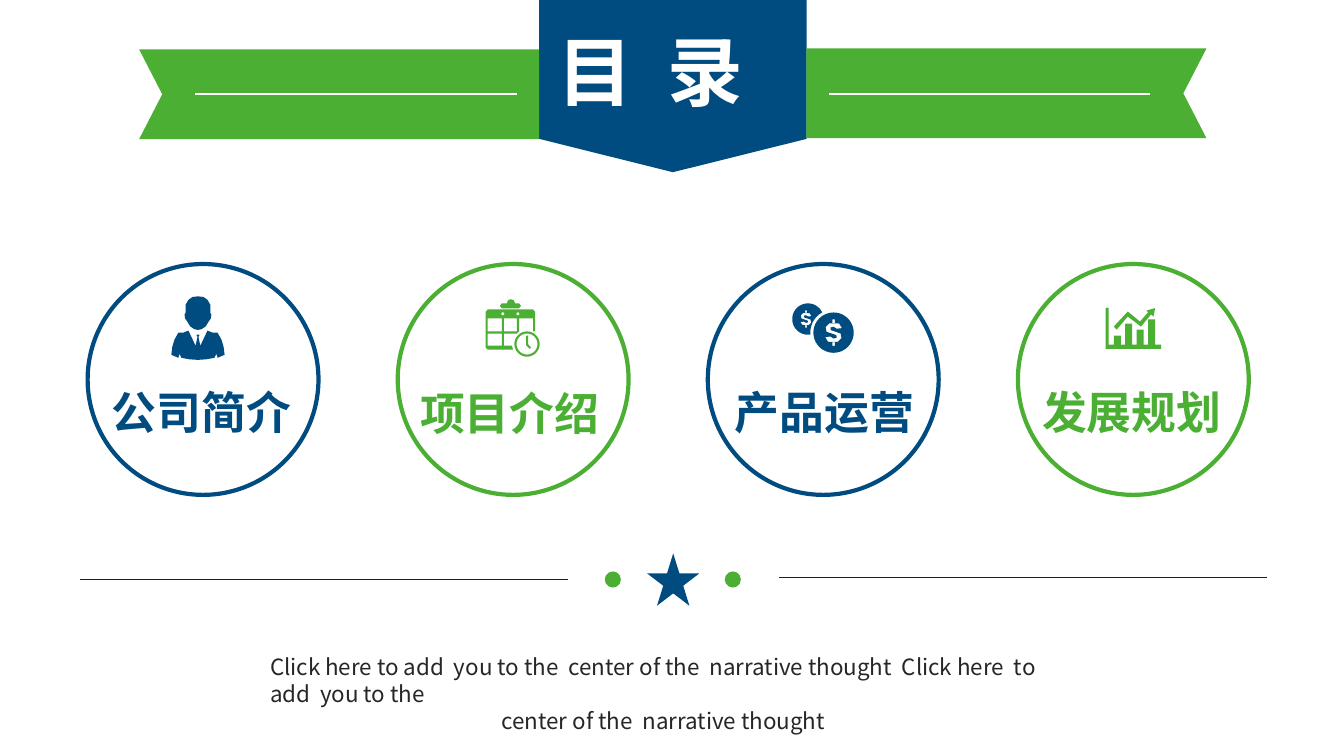
from dataclasses import dataclass
from math import cos, radians, sin

from lxml.etree import SubElement
from pptx import Presentation
from pptx.dml.color import RGBColor
from pptx.enum.shapes import MSO_CONNECTOR, MSO_SHAPE
from pptx.enum.text import MSO_AUTO_SIZE, PP_ALIGN
from pptx.oxml.ns import qn
from pptx.util import Pt

Point = tuple[float, float]
Contour = list[Point]


@dataclass(frozen=True)
class Theme:
    navy: str = "004C80"
    green: str = "4BAF33"
    white: str = "FFFFFF"
    rule: str = "14232A"
    body: str = "262626"
    heading_font: str = "Noto Sans CJK SC"
    body_font: str = "Noto Sans CJK JP"
    heading_size: float = 54
    topic_size: float = 32
    body_size: float = 16


@dataclass(frozen=True)
class Topic:
    label: str
    color: str
    label_at: Point
    icon: list[Contour]
    icon_at: Point


@dataclass(frozen=True)
class RibbonTail:
    inner: float
    top: float
    direction: int


@dataclass(frozen=True)
class Ornament:
    kind: MSO_SHAPE
    left: float
    top: float
    size: float
    color: str


THEME = Theme()


def rgb(color: str) -> RGBColor:
    return RGBColor.from_string(color)


def arc(cx: float, cy: float, radius: float, start: float = 0, end: float = 360) -> Contour:
    angles = [radians(start + (end - start) * step / 48) for step in range(49)]
    return [(cx + radius * cos(angle), cy + radius * sin(angle)) for angle in angles]


def box(x: float, y: float, width: float, height: float) -> Contour:
    return [(x, y), (x + width, y), (x + width, y + height), (x, y + height)]


def mirrored(half: Contour, width: float) -> Contour:
    return half + [(width - x, y) for x, y in reversed(half)]


def dollar(cx: float, cy: float, scale: float) -> list[Contour]:
    curve = [(6, -3.2), (4, -6.5), (-3, -6.7), (-5.7, -4), (-5, -0.6),
             (2, 1.8), (2.2, 3.6), (0, 4.2), (-2.2, 2.8)]
    sign = [curve + [(-x, -y) for x, y in curve],
            box(-0.9, -9.5, 1.8, 2.8), box(-0.9, 6.7, 1.8, 2.8)]
    return [[(cx + x * scale, cy + y * scale) for x, y in part] for part in sign]


def businessman() -> list[Contour]:
    head = [(19, 0), (15, 0.5), (12.2, 2.5), (10.2, 6), (10.1, 12.2), (9.4, 12.6),
            (9.8, 15.8), (11, 17.5), (13.5, 21.5), (16.5, 23.5), (19, 24)]
    suit = [(18, 27.4), (18, 28.1), (18.7, 28.8), (17.3, 35.3), (12.2, 24.5),
            (8.5, 26), (5, 26), (2.2, 31), (0.7, 36), (0, 41.8), (5, 43.9),
            (5.8, 41), (7.2, 43.9), (13, 45), (19, 45.4)]
    return [mirrored(head, 38), mirrored(suit, 38)]


def calendar() -> list[Contour]:
    clip = [(10.1, 4.7), (11.5, 2.9), (15.1, 2.9), (16, 0.6), (18, 0), (20, 0.6),
            (20.9, 2.9), (23.8, 2.9), (25.2, 4.7), (23.8, 6.5), (11.5, 6.5)]
    frame = [(0, 9), (1.5, 7.2), (33.7, 7.2), (35.3, 9), (35.3, 23), (33.8, 23),
             (33.8, 13.7), (23.8, 13.7), (23.8, 23), (22.3, 24.5), (13, 24.5),
             (13, 33.1), (18.7, 33.1), (19.5, 36), (1.5, 36), (0, 34.5)]
    hands = [(28.8, 26), (30.2, 26), (30.2, 32), (32.4, 34.6), (31.4, 35.4), (28.8, 32.8)]
    days = [box(1.4, 13.7, 10.1, 9.3), box(13, 13.7, 9.3, 9.3), box(1.4, 24.5, 10.1, 8.6)]
    rings = [arc(x, 10.4, 1.1) for x in (12.2, 23)]
    clock = [arc(29.5, 32, radius) for radius in (9, 7.5)]
    return [clip, frame, *days, *rings, *clock, hands]


def coins() -> list[Contour]:
    back = arc(11.2, 11.2, 11.2, 81, 334.8) + arc(29.5, 20.9, 16.6, 240.5, 175.3)
    front = arc(29.5, 20.9, 14.4)
    return [back, *dollar(9.8, 11.2, 0.65), front, *dollar(29.5, 20.9, 1)]


def growth() -> list[Contour]:
    axes = [(0, 0.7), (1.1, 0), (2.2, 0.7), (2.2, 26.6), (39.6, 26.6), (39.6, 29.5), (0, 29.5)]
    trend = [(15.8, 6.5), (7.9, 15.8), (5.8, 13.7), (15.8, 2.9), (24.5, 10.1), (30.2, 3.6),
             (29.2, 2.2), (35.3, 0.5), (34.2, 6.5), (32.4, 5), (25.2, 13.7)]
    bars = [box(5.8 + 8.15 * i, top, 5, 26.6 - top) for i, top in enumerate((20.2, 11.5, 15.8, 8.6))]
    return [axes, trend, *bars]


def paint(shape, color: str) -> None:
    shape.shadow.inherit = False
    shape.fill.solid()
    shape.fill.fore_color.rgb = rgb(color)
    shape.line.fill.background()


def draw_outline(shapes, contours: list[Contour], color: str, at: Point = (0, 0)) -> None:
    scaled = [[(Pt(x), Pt(y)) for x, y in contour] for contour in contours]
    builder = shapes.build_freeform(*scaled[0][0], scale=1.0)
    builder.add_line_segments(scaled[0][1:], close=True)
    for contour in scaled[1:]:
        builder.move_to(*contour[0])
        builder.add_line_segments(contour[1:], close=True)
    paint(builder.convert_to_shape(Pt(at[0]), Pt(at[1])), color)


def draw_rule(shapes, start: float, end: float, y: float, color: str, width: float) -> None:
    rule = shapes.add_connector(MSO_CONNECTOR.STRAIGHT, Pt(start), Pt(y), Pt(end), Pt(y))
    rule.line.color.rgb = rgb(color)
    rule.line.width = Pt(width)
    SubElement(rule.element.spPr, qn("a:effectLst"))


def draw_tail(shapes, tail: RibbonTail) -> None:
    group = shapes.add_group_shape().shapes
    inner, outer, notch, start, end = (
        tail.inner + tail.direction * reach for reach in (0, 285.8, 269.3, 16.2, 245.8))
    middle, bottom = tail.top + 32.05, tail.top + 64.1
    ribbon = [(inner, tail.top), (outer, tail.top), (notch, middle), (outer, bottom), (inner, bottom)]
    draw_outline(group, [ribbon], THEME.green)
    draw_rule(group, min(start, end), max(start, end), 67, THEME.white, 1.75)


def write(paragraph, text: str, typeface: str, size: float, color: str, bold: bool) -> None:
    run = paragraph.add_run()
    run.text = text
    for name, value in {"name": typeface, "size": Pt(size), "bold": bold}.items():
        setattr(run.font, name, value)
    run.font.color.rgb = rgb(color)
    SubElement(run.font._element, qn("a:ea")).set("typeface", typeface)


def draw_title(shapes, text: str, at: Point, extent: Point, size: float, color: str) -> None:
    title = shapes.add_textbox(*map(Pt, (*at, *extent))).text_frame
    title.word_wrap = False
    title.auto_size = MSO_AUTO_SIZE.SHAPE_TO_FIT_TEXT
    write(title.paragraphs[0], text, THEME.heading_font, size, color, True)


def draw_topic(shapes, index: int, topic: Topic) -> None:
    ring = shapes.add_shape(MSO_SHAPE.OVAL, Pt(62.6 + 221.5 * index), Pt(188.6), Pt(164.9), Pt(164.9))
    ring.shadow.inherit = False
    ring.fill.background()
    ring.line.color.rgb = rgb(topic.color)
    ring.line.width = Pt(3)
    draw_outline(shapes, topic.icon, topic.color, topic.icon_at)
    draw_title(shapes, topic.label, topic.label_at, (144, 46), THEME.topic_size, topic.color)


def draw_narrative(shapes, lines: list[tuple[str, PP_ALIGN]]) -> None:
    narrative = shapes.add_textbox(Pt(185.8), Pt(429.1), Pt(589), Pt(99)).text_frame
    for name, value in {"word_wrap": True, "margin_top": Pt(37.6)}.items():
        setattr(narrative, name, value)
    for index, (text, alignment) in enumerate(lines):
        paragraph = narrative.add_paragraph() if index else narrative.paragraphs[0]
        for name, value in {"alignment": alignment, "line_spacing": Pt(19.3)}.items():
            setattr(paragraph, name, value)
        if alignment == PP_ALIGN.LEFT:
            paragraph._p.get_or_add_pPr().set("marR", str(Pt(13)))
        write(paragraph, text, THEME.body_font, THEME.body_size, THEME.body, False)


def main() -> None:
    deck = Presentation()
    deck.slide_width, deck.slide_height = Pt(960), Pt(540)
    shapes = deck.slides.add_slide(deck.slide_layouts[6]).shapes
    pennant = [(385.2, 0), (576.2, 0), (576.2, 99.2), (480.7, 123), (385.2, 99.2)]
    draw_outline(shapes, [pennant], THEME.navy)
    for tail in (RibbonTail(385.2, 35.3, -1), RibbonTail(576, 34.6, 1)):
        draw_tail(shapes, tail)
    draw_title(shapes, "目  录", (391, 14.4), (179.3, 72.7), THEME.heading_size, THEME.white)
    topics = [
        Topic("公司简介", THEME.navy, (72.7, 271.4), businessman(), (122.4, 211.7)),
        Topic("项目介绍", THEME.green, (293, 272.2), calendar(), (347, 213.8)),
        Topic("产品运营", THEME.navy, (517.7, 271.4), coins(), (565.9, 216.7)),
        Topic("发展规划", THEME.green, (737.3, 271.4), growth(), (789.8, 219.6)),
    ]
    for index, topic in enumerate(topics):
        draw_topic(shapes, index, topic)
    for start, y in ((56.9, 414), (556.6, 412.6)):
        draw_rule(shapes, start, start + 348.5, y, THEME.rule, 0.5)
    ornaments = [
        Ornament(MSO_SHAPE.STAR_5_POINT, 462.2, 395.3, 37.4, THEME.navy),
        Ornament(MSO_SHAPE.FLOWCHART_CONNECTOR, 432, 408.2, 11.5, THEME.green),
        Ornament(MSO_SHAPE.FLOWCHART_CONNECTOR, 517.7, 408.2, 11.5, THEME.green),
    ]
    for item in ornaments:
        paint(shapes.add_shape(item.kind, *map(Pt, (item.left, item.top, item.size, item.size))), item.color)
    draw_narrative(shapes, [
        ("Click here to add  you to the  center of the  narrative thought  Click here  to add  you to the",
         PP_ALIGN.LEFT),
        ("center of the  narrative thought", PP_ALIGN.CENTER),
    ])
    deck.save("out.pptx")


if __name__ == "__main__":
    main()
